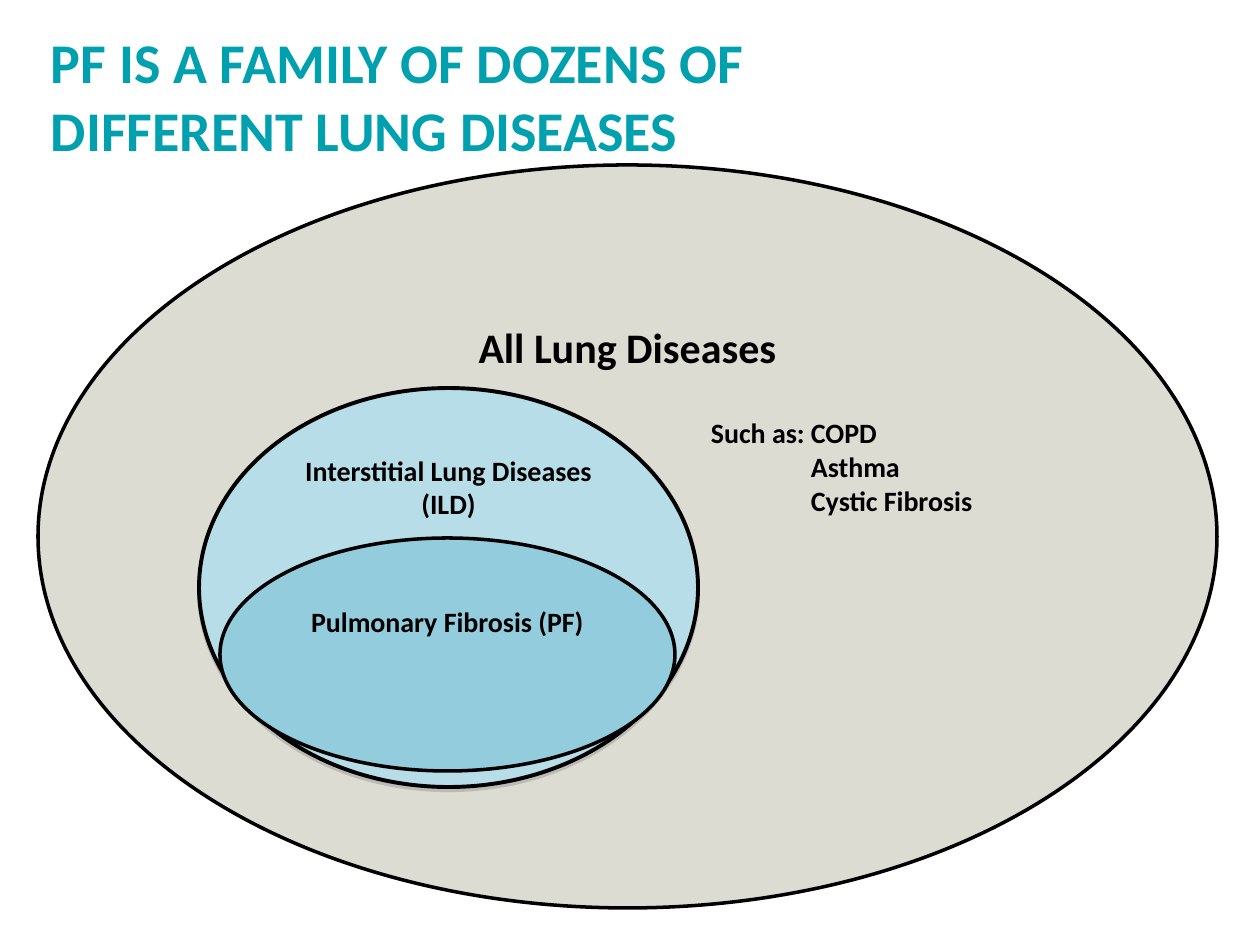
from lxml.etree import SubElement
from pptx import Presentation
from pptx.dml.color import RGBColor
from pptx.enum.shapes import MSO_SHAPE as SHAPE
from pptx.enum.text import MSO_ANCHOR as ANCHOR, PP_ALIGN as ALIGN
from pptx.oxml.ns import qn
from pptx.util import Emu, Pt

TEAL = RGBColor(0x00, 0xA0, 0xAF)
BLACK = RGBColor(0x00, 0x00, 0x00)
STONE = RGBColor(0xDC, 0xDC, 0xD2)
PALE_BLUE = RGBColor(0xB7, 0xDE, 0xE8)
MID_BLUE = RGBColor(0x93, 0xCD, 0xDD)


def px(n):
    return Emu(round(n * 914400 / 126))


def write(sp, lines, size=16, color=BLACK, align=ALIGN.LEFT, top=0, wrap=True, hang=0):
    """Fill a shape with bold lines; lines after the first are indented by hang."""
    tf = sp.text_frame
    tf.word_wrap = wrap
    tf.vertical_anchor = ANCHOR.TOP
    tf.margin_left = tf.margin_right = px(13)
    tf.margin_top, tf.margin_bottom = px(top), 0
    for i, text in enumerate(lines):
        p = tf.paragraphs[0] if i == 0 else tf.add_paragraph()
        p.alignment = align
        if i and hang:
            p._p.get_or_add_pPr().set("marL", str(px(hang)))
        r = p.add_run()
        r.text = text
        r.font.name, r.font.size, r.font.bold = "Calibri", Pt(size), True
        r.font.color.rgb = color


prs = Presentation()
prs.slide_width, prs.slide_height = px(1260), px(945)
s = prs.slides.add_slide(prs.slide_layouts[6])

# Nested ellipses, from the widest group to the narrowest
ellipses = [
    ((38, 165, 1179, 743), STONE, 2, "All Lung Diseases", 24, 48),
    ((199, 388, 499, 399), PALE_BLUE, 2.25, "Interstitial Lung Diseases (ILD)", 16, 7),
    ((220, 538, 455, 233), MID_BLUE, 2, "Pulmonary Fibrosis (PF)", 16, 32),
]
for box, fill, width, label, size, top in ellipses:
    sp = s.shapes.add_shape(SHAPE.OVAL, *map(px, box))
    sp.shadow.inherit = False
    sp.fill.solid()
    sp.fill.fore_color.rgb = fill
    sp.line.color.rgb = BLACK
    sp.line.width = Pt(width)
    write(sp, [label], size=size, align=ALIGN.CENTER, top=top)

    # Soft shadow under the ILD ellipse only
    if fill == PALE_BLUE:
        effects = sp._element.spPr.find(qn("a:effectLst"))
        shadow = SubElement(effects, qn("a:outerShdw"), blurRad="0",
                            dist=str(Pt(1.8)), dir="5400000", rotWithShape="0")
        tint = SubElement(shadow, qn("a:srgbClr"), val="808080")
        SubElement(tint, qn("a:alpha"), val="35000")

# Title
title = s.shapes.add_textbox(px(38), px(28), px(804), px(117))
write(title, ["PF IS A FAMILY OF DOZENS OF DIFFERENT LUNG DISEASES"], size=32, color=TEAL)

# Examples of other lung diseases
examples = s.shapes.add_textbox(px(698), px(410), px(291), px(115))
write(examples, ["Such as: COPD", "Asthma", "Cystic Fibrosis"], top=6, wrap=False, hang=100)

prs.save("out.pptx")
